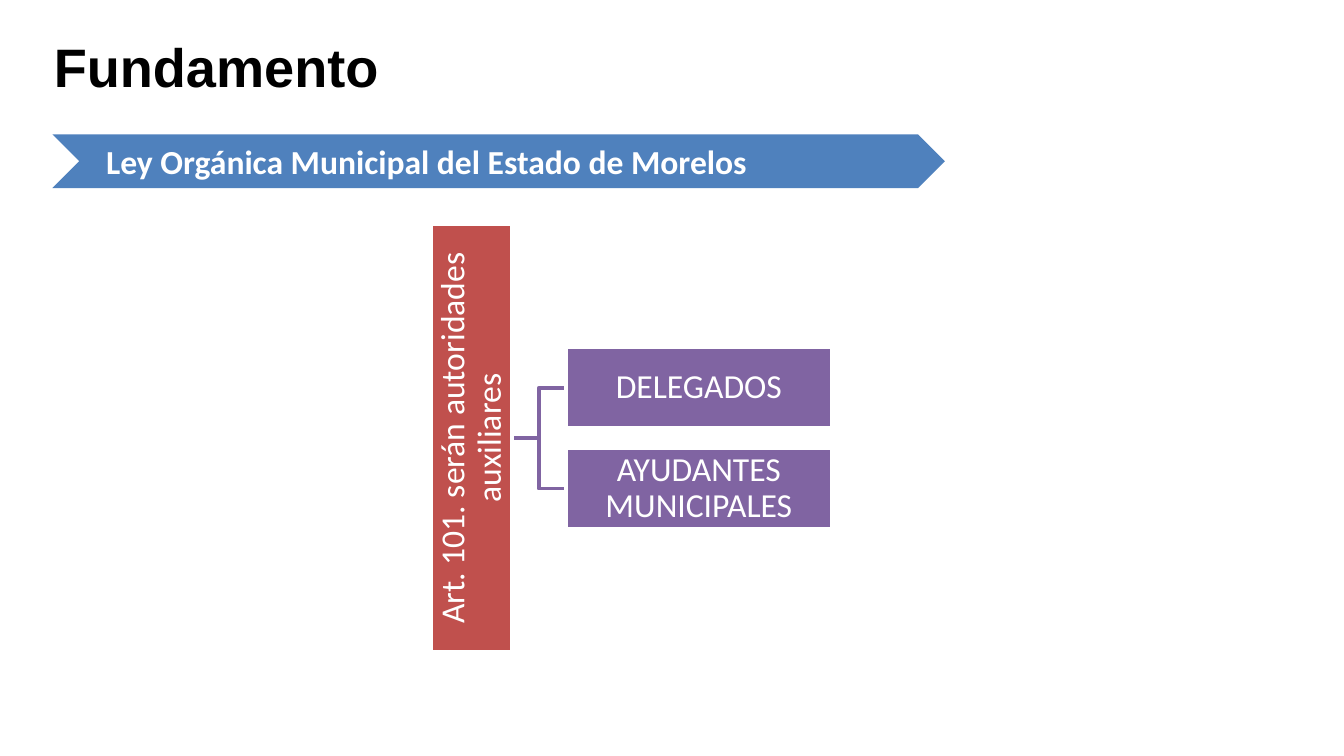
from lxml import etree
from pptx import Presentation
from pptx.dml.color import RGBColor
from pptx.enum.shapes import MSO_CONNECTOR, MSO_SHAPE
from pptx.enum.text import MSO_ANCHOR, PP_ALIGN
from pptx.oxml.ns import qn
from pptx.util import Inches, Pt

RECTANGLE, CHEVRON = MSO_SHAPE.RECTANGLE, MSO_SHAPE.CHEVRON
ELBOW = MSO_CONNECTOR.ELBOW
TOP, MIDDLE = MSO_ANCHOR.TOP, MSO_ANCHOR.MIDDLE
LEFT, CENTER = PP_ALIGN.LEFT, PP_ALIGN.CENTER

HEADING = "Fundamento"
LAW = "Ley Orgánica Municipal del Estado de Morelos"
ARTICLE = "Art. 101. serán autoridades auxiliares"
AUTHORITIES = ["DELEGADOS", "AYUDANTES MUNICIPALES"]
COLORS = {"black": "000000", "white": "FFFFFF", "law": "4F81BD",
          "article": "C0504D", "authority": "8064A2"}

SLIDE_WIDTH = Inches(10)
SLIDE_HEIGHT = SLIDE_WIDTH * 9 // 16
MARGIN = 0.39
BOX_HEIGHT = 0.6
ARTICLE_LENGTH = 3.18
AUTHORITY_WIDTH, AUTHORITY_PITCH = 1.98, 0.75
TREE_LEFT, TREE_MIDDLE, BRANCH_WIDTH = 3.21, 3.26, 0.4


def color(name):
    return RGBColor.from_string(COLORS[name])


def write(shape, text, size, font, ink, bold, align, anchor, insets):
    frame = shape.text_frame
    frame.text = text
    frame.word_wrap = True
    frame.vertical_anchor = anchor
    (frame.margin_left, frame.margin_top,
     frame.margin_right, frame.margin_bottom) = map(Inches, insets)
    paragraph = frame.paragraphs[0]
    paragraph.alignment = align
    paragraph.font.size = Pt(size)
    paragraph.font.name = font
    paragraph.font.bold = bold
    paragraph.font.color.rgb = color(ink)
    return paragraph


def add_block(slide, preset, fill, left, top, width, height):
    block = slide.shapes.add_shape(preset, *map(Inches, (left, top, width, height)))
    block.shadow.inherit = False
    block.fill.solid()
    block.fill.fore_color.rgb = color(fill)
    block.line.fill.background()
    return block


def add_node(slide, text, fill, center_x, center_y, width):
    node = add_block(slide, RECTANGLE, fill, center_x - width / 2,
                     center_y - BOX_HEIGHT / 2, width, BOX_HEIGHT)
    node.line.color.rgb = color("white")
    node.line.width = Pt(2)
    paragraph = write(node, text, 18, "Calibri", "white", False, CENTER, MIDDLE, [0.01] * 4)
    paragraph.line_spacing = 0.9
    return node


def add_branch(slide, start_x, start_y, end_x, end_y):
    branch = slide.shapes.add_connector(ELBOW, *map(Inches, (start_x, start_y, end_x, end_y)))
    branch.line.color.rgb = color("authority")
    branch.line.width = Pt(2)
    etree.SubElement(branch._element.spPr, qn("a:effectLst"))


def main():
    presentation = Presentation()
    presentation.slide_width, presentation.slide_height = SLIDE_WIDTH, SLIDE_HEIGHT
    slide = presentation.slides.add_slide(presentation.slide_layouts[5])

    heading = slide.shapes.title
    heading.left, heading.top, heading.width, heading.height = map(
        Inches, (MARGIN, 0.23, 5.31, 0.5))
    paragraph = write(heading, HEADING, 29, "Arial", "black", True, LEFT, TOP, (0.01, 0.02, 0, 0))
    paragraph.space_before = Pt(0)

    law = add_block(slide, CHEVRON, "law", MARGIN, 1, 6.64, 0.4)
    write(law, LAW, 18, "Calibri", "white", True, LEFT, MIDDLE, (0.2, 0.05, 0.1, 0.05))

    branch_start = TREE_LEFT + BOX_HEIGHT
    branch_end = branch_start + BRANCH_WIDTH
    first_middle = TREE_MIDDLE - AUTHORITY_PITCH * (len(AUTHORITIES) - 1) / 2
    middles = [first_middle + i * AUTHORITY_PITCH for i in range(len(AUTHORITIES))]

    for middle in reversed(middles):
        add_branch(slide, branch_start, TREE_MIDDLE, branch_end, middle)
    article = add_node(slide, ARTICLE, "article", TREE_LEFT + BOX_HEIGHT / 2,
                       TREE_MIDDLE, ARTICLE_LENGTH)
    article.rotation = 270
    for authority, middle in zip(AUTHORITIES, middles):
        add_node(slide, authority, "authority", branch_end + AUTHORITY_WIDTH / 2,
                 middle, AUTHORITY_WIDTH)

    presentation.save("out.pptx")


if __name__ == "__main__":
    main()
